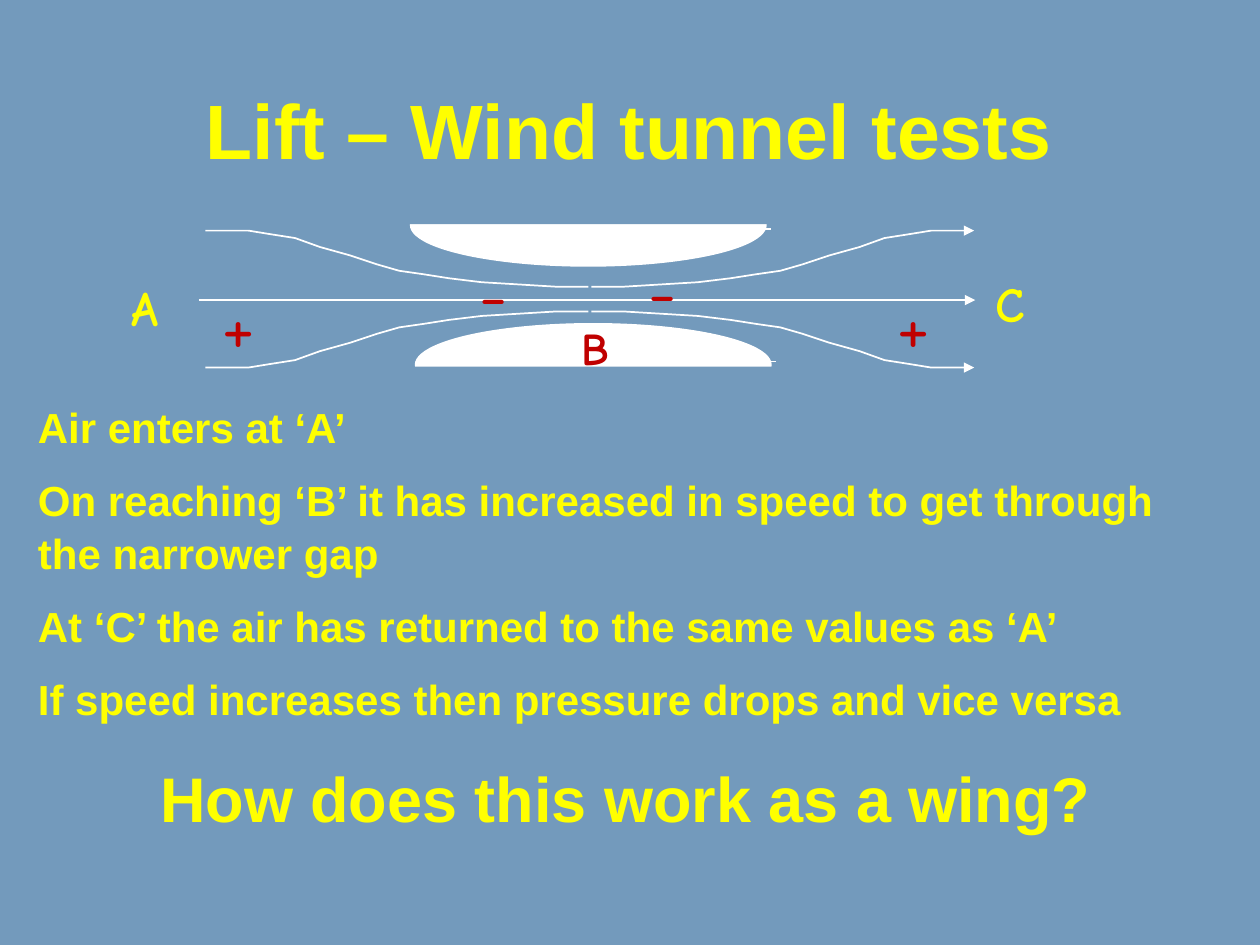
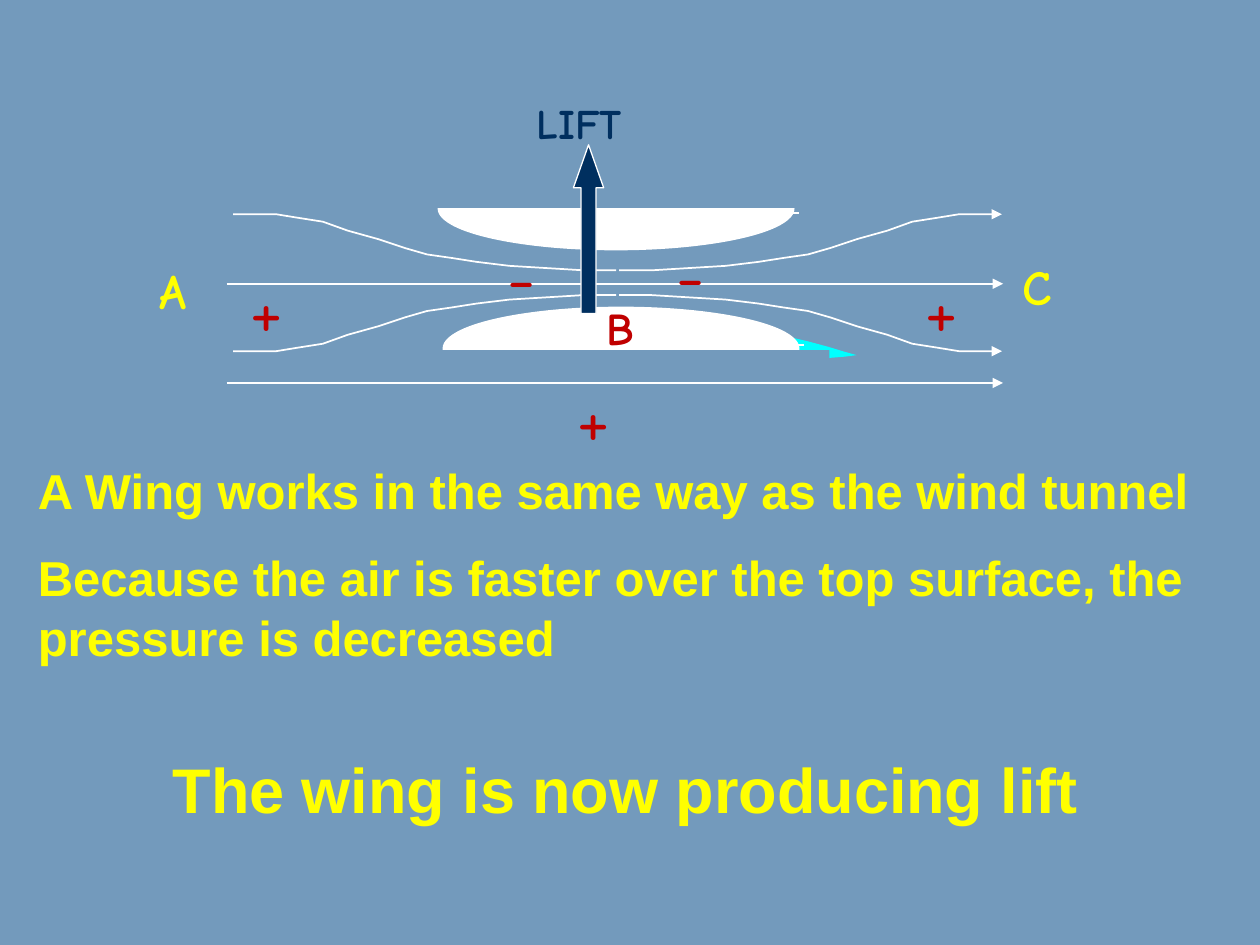
from lxml import etree
from pptx import Presentation
from pptx import util as u
from pptx.dml.color import RGBColor
from pptx.enum import shapes, text
from pptx.oxml import ns

SKY = RGBColor(0x73, 0x9A, 0xBC)
YELLOW = RGBColor(0xFF, 0xFF, 0x00)
WHITE = RGBColor(0xFF, 0xFF, 0xFF)
RED = RGBColor(0xC0, 0x00, 0x00)
NAVY = RGBColor(0x00, 0x2F, 0x5F)
CYAN = RGBColor(0x00, 0xFF, 0xFF)
PLAIN, HAND = "Arial", "Comic Neue"
LEFT, CENTER = text.PP_ALIGN.LEFT, text.PP_ALIGN.CENTER

STREAM = [(7.75, 1.38), (6.88, 1.38), (6.45, 1.31), (5.94, 1.23), (5.44, 1.05),
          (4.83, 0.88), (4.29, 0.7), (3.84, 0.57), (3.35, 0.5), (2.84, 0.42),
          (2.18, 0.34), (1.35, 0.29), (0.69, 0.25), (0.03, 0.25)]
WING_SECTION = [(8.97, 7.09), (9.4, 6.76), (9.91, 6.53), (10.49, 6.38), (11.13, 6.27),
                (11.79, 6.25), (12.5, 6.25), (13.21, 6.32), (13.89, 6.4), (14.55, 6.5),
                (15.19, 6.63), (15.77, 6.76), (16.28, 6.88), (16.69, 6.99), (17.02, 7.09),
                (17.27, 7.16), (17.04, 7.19), (16.43, 7.24), (15.54, 7.29), (14.48, 7.37),
                (13.28, 7.44), (12.09, 7.47), (10.97, 7.49), (10.01, 7.47), (9.3, 7.39),
                (9.04, 7.29)]
HALVES = [(8.38, 6.53, 0.86, 0.76), (8.28, 3.71, -0.26, 0.91)]
MARKS = [("A", 2.41, 5.46, 2.01, 28, YELLOW, True),
         ("C", 19.81, 5.38, 1.8, 28, YELLOW, True),
         ("+", 4.22, 5.46, 1.24, 44, RED, False),
         ("+", 17.82, 5.46, 1.24, 44, RED, False),
         ("-", 9.42, 4.9, 1.19, 40, RED, False),
         ("-", 12.83, 4.85, 1.19, 40, RED, False)]

SLIDES = [
    dict(title="Lift – Wind tunnel tests", shift=(0, 0), flow_lines=[6.05],
         labels=[("B", 10.9, 6.32, 2.21, 26, RED, True)],
         body_top=7.92, body_height=9.25, size=24, leading=1.05, gap=11.5, last_gap=18,
         lines=["Air enters at ‘A’",
                "On reaching ‘B’ it has increased in speed to get through the narrower gap",
                "At ‘C’ the air has returned to the same values as ‘A’",
                "If speed increases then pressure drops and vice versa"],
         closing="How does this work as a wing?"),
    dict(title=None, shift=(0.56, -0.33), flow_lines=[5.72, 7.72],
         labels=[("B", 11.71, 5.92, 1.6, 26, RED, True),
                 ("LIFT", 10.57, 1.85, 3.99, 24, NAVY, True),
                 ("+", 11.38, 7.32, 1.24, 44, RED, False)],
         body_top=9.12, body_height=7.77, size=28, leading=1.03, gap=15, last_gap=46.5,
         lines=["A Wing works in the same way as the wind tunnel",
                "Because the air is faster over the top surface, the pressure is decreased"],
         closing="The wing is now producing lift"),
]


def finish(shape, fill=None, line=None, width=1, arrow=None):
    if line is None:
        shape.line.fill.background()
    else:
        shape.line.color.rgb = line
        shape.line.width = u.Pt(width)
    if arrow:
        ln = shape._element.spPr.find(ns.qn("a:ln"))
        etree.SubElement(ln, ns.qn("a:" + arrow), type="triangle")
    if hasattr(shape, "fill"):
        shape.shadow.inherit = False
        if fill is None:
            shape.fill.background()
        else:
            shape.fill.solid()
            shape.fill.fore_color.rgb = fill
    else:
        etree.SubElement(shape._element.spPr, ns.qn("a:effectLst"))


def write(paragraph, words, font, size, color, bold=True, align=LEFT):
    paragraph.alignment = align
    run = paragraph.add_run()
    run.text = words
    run.font.name = font
    run.font.size = u.Pt(size)
    run.font.bold = bold
    run.font.color.rgb = color


prs = Presentation()
prs.slide_width, prs.slide_height = u.Cm(25.4), u.Cm(19.05)
backdrop = prs.slide_master.background.fill
backdrop.solid()
backdrop.fore_color.rgb = SKY

for content in SLIDES:
    slide = prs.slides.add_slide(prs.slide_layouts[1])
    parts = slide.shapes
    dx, dy = content["shift"]
    title, body = slide.placeholders[0], slide.placeholders[1]

    if content["title"]:
        title.left, title.top = u.Cm(3.81), u.Cm(1.73)
        title.width, title.height = u.Cm(17.75), u.Cm(1.96)
        title.text_frame.auto_size = text.MSO_AUTO_SIZE.NONE
        heading = title.text_frame.paragraphs[0]
        heading.line_spacing = 0.9
        write(heading, content["title"], PLAIN, 44, YELLOW, align=CENTER)
    else:
        title._element.getparent().remove(title._element)
        outline = [(u.Cm(x), u.Cm(y)) for x, y in WING_SECTION]
        builder = parts.build_freeform(*outline[0])
        builder.add_line_segments(outline[1:])
        finish(builder.convert_to_shape(), CYAN)

    for left, top, cover_drop, chord_drop in HALVES:
        left, top = left + dx, top + dy
        half = parts.add_shape(shapes.MSO_SHAPE.OVAL, u.Cm(left), u.Cm(top),
                               u.Cm(7.16), u.Cm(1.65))
        finish(half, WHITE, WHITE)
        cover = parts.add_shape(shapes.MSO_SHAPE.RECTANGLE, u.Cm(left - 0.68),
                                u.Cm(top + cover_drop), u.Cm(8.46), u.Cm(1.07))
        finish(cover, SKY)
        chord_y = u.Cm(top + chord_drop)
        chord = parts.add_connector(shapes.MSO_CONNECTOR.STRAIGHT, u.Cm(left + 0.06),
                                    chord_y, u.Cm(left + 7.27), chord_y)
        finish(chord, line=WHITE)

    for y in content["flow_lines"]:
        flow = parts.add_connector(shapes.MSO_CONNECTOR.STRAIGHT, u.Cm(4.01 + dx), u.Cm(y),
                                   u.Cm(19.66 + dx), u.Cm(y))
        finish(flow, line=WHITE, arrow="tailEnd")

    for up_down in (-1, 1):
        for side in (-1, 1):
            curve = [(u.Cm(11.89 + dx + side * x), u.Cm(6.03 + dy + up_down * y))
                     for x, y in STREAM]
            builder = parts.build_freeform(*curve[0])
            builder.add_line_segments(curve[1:], close=False)
            finish(builder.convert_to_shape(), line=WHITE,
                   arrow="headEnd" if side == 1 else None)

    if not content["title"]:
        lift = parts.add_shape(shapes.MSO_SHAPE.UP_ARROW, u.Cm(11.56), u.Cm(2.92),
                               u.Cm(0.61), u.Cm(3.4))
        lift.adjustments[0], lift.adjustments[1] = 0.5, 1.42
        finish(lift, NAVY, WHITE, 0.75)

    shifted = [(mark, x + dx, y + dy, *style) for mark, x, y, *style in MARKS]
    for mark, x, y, width, size, color, bold in shifted + content["labels"]:
        label = parts.add_textbox(u.Cm(x), u.Cm(y), u.Cm(width), u.Cm(size * 0.05))
        label.text_frame.word_wrap = True
        write(label.text_frame.paragraphs[0], mark, HAND, size, color, bold,
              CENTER if mark == "B" else LEFT)

    body.left, body.top = u.Cm(0.51), u.Cm(content["body_top"])
    body.width, body.height = u.Cm(24.21), u.Cm(content["body_height"])
    frame = body.text_frame
    frame.auto_size = text.MSO_AUTO_SIZE.NONE
    frame.vertical_anchor = text.MSO_ANCHOR.TOP
    lines = content["lines"] + [content["closing"]]
    for i, words in enumerate(lines):
        closing = i == len(lines) - 1
        paragraph = frame.add_paragraph() if i else frame.paragraphs[0]
        props = paragraph._p.get_or_add_pPr()
        props.set("marL", "0")
        props.set("indent", "0")
        etree.SubElement(props, ns.qn("a:buNone"))
        paragraph.line_spacing = content["leading"]
        paragraph.space_before = u.Pt(content["last_gap"] if closing
                                      else content["gap"] if i else 0)
        write(paragraph, words, PLAIN, 36 if closing else content["size"], YELLOW,
              align=CENTER if closing else LEFT)

prs.save("out.pptx")
